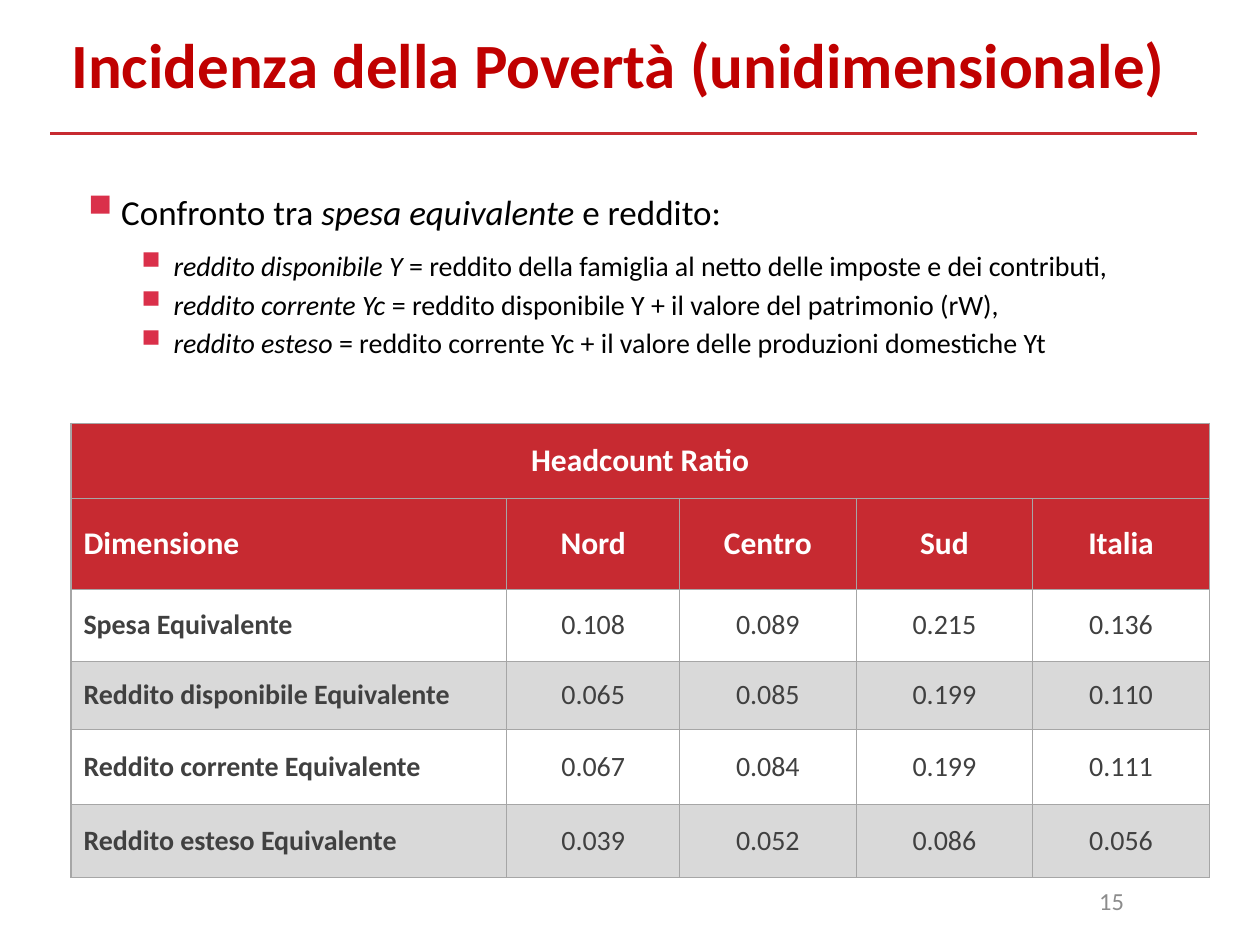
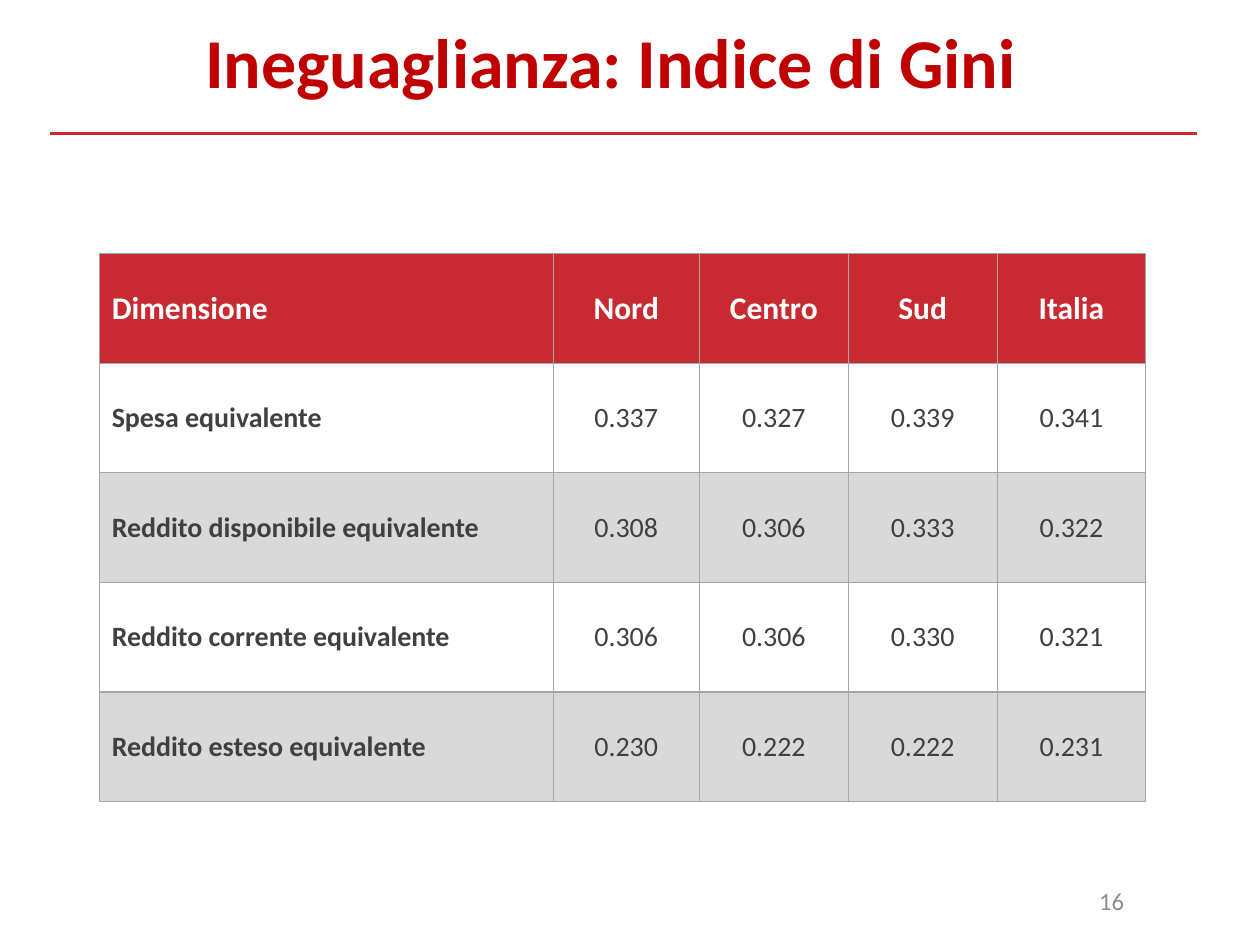
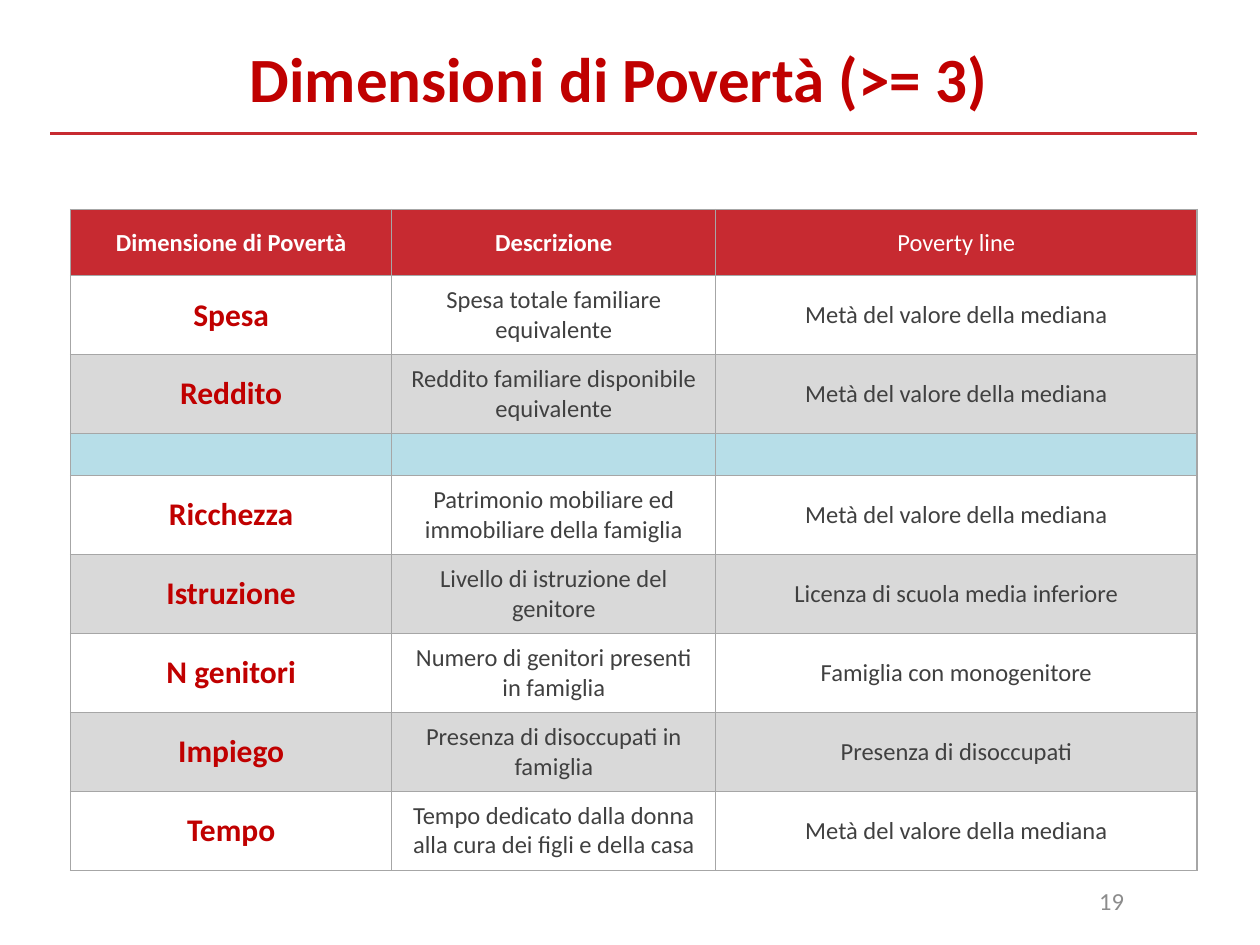
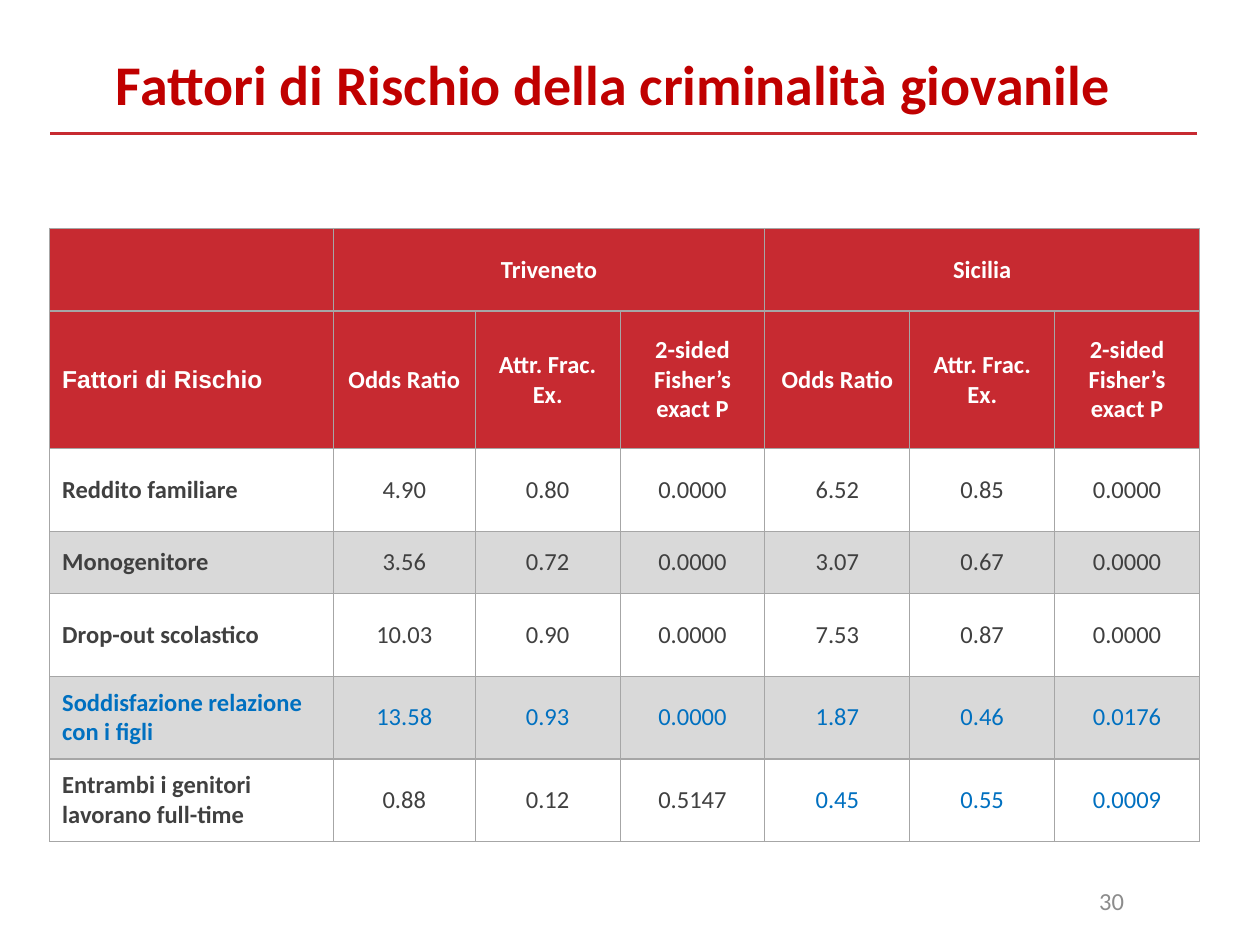
from lxml.etree import SubElement
from pptx import Presentation
from pptx.dml.color import RGBColor
from pptx.enum.shapes import MSO_CONNECTOR
from pptx.enum.text import MSO_ANCHOR, PP_ALIGN
from pptx.oxml import parse_xml
from pptx.oxml.ns import nsdecls, qn
from pptx.util import Cm, Pt

RED = RGBColor(0xC7, 0x2A, 0x31)
DEEP = RGBColor(0xC0, 0x00, 0x00)
WHITE = RGBColor(0xFF, 0xFF, 0xFF)
BLACK = RGBColor(0x00, 0x00, 0x00)
DARK = RGBColor(0x40, 0x40, 0x40)
GREY = RGBColor(0x8C, 0x8C, 0x8C)
BAND = RGBColor(0xD9, 0xD9, 0xD9)
EDGE = RGBColor(0xA6, 0xA6, 0xA6)
BLUE = RGBColor(0x00, 0x70, 0xC0)
SKY = RGBColor(0xB7, 0xDE, 0xE8)
BULLET = RGBColor(0xDA, 0x30, 0x4A)

FONT = "Calibri"
AREAS = ["Dimensione", "Nord", "Centro", "Sud", "Italia"]
MEDIAN = "Metà del valore della mediana"


def style(para, size, color, bold=False, name=FONT):
    for run in para.runs:
        run.font.name = name
        run.font.size = Pt(size)
        run.font.bold = bold
        run.font.color.rgb = color


def add_box(slide, left, top, width, height, inset=True):
    box = slide.shapes.add_textbox(Cm(left), Cm(top), Cm(width), Cm(height))
    frame = box.text_frame
    frame.word_wrap = True
    if not inset:
        frame.margin_left = frame.margin_right = 0
        frame.margin_top = frame.margin_bottom = 0
    return frame


def add_label(frame, text, size, color, align, bold=False):
    frame.text = text
    para = frame.paragraphs[0]
    para.alignment = align
    style(para, size, color, bold)


def add_page(deck, number, title, size, left, top):
    slide = deck.slides.add_slide(deck.slide_layouts[6])
    rule = slide.shapes.add_connector(
        MSO_CONNECTOR.STRAIGHT, Cm(24.13), Cm(2.69), Cm(1), Cm(2.69))
    rule.line.color.rgb = RED
    rule.line.width = Pt(2)
    SubElement(rule._element.spPr, qn("a:effectLst"))
    foot = add_box(slide, 15.29, 17.65, 7.62, 1.02)
    foot.vertical_anchor = MSO_ANCHOR.MIDDLE
    add_label(foot, str(number), 14, GREY, PP_ALIGN.RIGHT)
    head = add_box(slide, left, top, 22.94, 1.9, inset=False)
    add_label(head, title, size, DEEP, PP_ALIGN.CENTER, True)
    return slide


def add_bullet(para, parts, size, level, before):
    para.level = level
    para.alignment = PP_ALIGN.JUSTIFY
    para.space_before = Pt(before)
    props = para._p.get_or_add_pPr()
    props.set("marL", str(Cm(1.9 if level else 0.79)))
    props.set("indent", str(-Cm(0.79)))
    tint = SubElement(props, qn("a:buClr"))
    SubElement(tint, qn("a:srgbClr")).set("val", str(BULLET))
    SubElement(props, qn("a:buSzPct")).set("val", "160000")
    SubElement(props, qn("a:buChar")).set("char", "▪")
    for text, slant in parts:
        run = para.add_run()
        run.text = text
        run.font.italic = slant
    style(para, size, BLACK)


def paint(cell, color):
    cell.fill.solid()
    cell.fill.fore_color.rgb = color


def frame_cell(cell):
    props = cell._tc.get_or_add_tcPr()
    for place, side in enumerate(("lnL", "lnR", "lnT", "lnB")):
        props.insert(place, parse_xml(
            f'<a:{side} {nsdecls("a")} w="{Pt(0.75)}"><a:solidFill>'
            f'<a:srgbClr val="{EDGE}"/></a:solidFill></a:{side}>'))


def add_grid(slide, left, top, cols, rows, data, heads, sizes, lead=PP_ALIGN.LEFT):
    shape = slide.shapes.add_table(
        len(rows), len(cols), Cm(left), Cm(top), Cm(sum(cols)), Cm(sum(rows)))
    table = shape.table
    table.first_row = table.horz_banding = False
    for col, width in zip(table.columns, cols):
        col.width = Cm(width)
    for row, height in zip(table.rows, rows):
        row.height = Cm(height)
    for r, line in enumerate(data):
        head = r < heads
        back = RED if head else BAND if (r - heads) % 2 else WHITE
        for c, text in enumerate(line):
            cell = table.cell(r, c)
            cell.vertical_anchor = MSO_ANCHOR.MIDDLE
            paint(cell, back)
            frame_cell(cell)
            if text:
                cell.text = text
                para = cell.text_frame.paragraphs[0]
                para.alignment = PP_ALIGN.CENTER if c else lead
                style(para, sizes[0] if head else sizes[1],
                      WHITE if head else DARK, head or c == 0)
    return table


def restyle(table, row, cols, *look):
    for col in cols:
        style(table.cell(row, col).text_frame.paragraphs[0], *look)


def add_poverty(deck):
    slide = add_page(deck, 15, "Incidenza della Povertà (unidimensionale)", 36, 1, 0.51)
    frame = add_box(slide, 1.6, 3.84, 23.11, 8.76, inset=False)
    add_bullet(frame.paragraphs[0], [
        ("Confronto tra ", False), ("spesa equivalente", True), (" e reddito:", False)],
        20, 0, 0)
    terms = [
        ("reddito disponibile Y",
         " = reddito della famiglia al netto delle imposte e dei contributi,"),
        ("reddito corrente Yc", " = reddito disponibile Y + il valore del patrimonio (rW),"),
        ("reddito esteso", " = reddito corrente Yc + il valore delle produzioni domestiche Yt"),
    ]
    for i, (term, rest) in enumerate(terms):
        add_bullet(frame.add_paragraph(), [(term, True), (rest, False)],
                   16, 1, 3 if i else 9)
    data = [
        ["Headcount Ratio", "", "", "", ""],
        AREAS,
        ["Spesa Equivalente", "0.108", "0.089", "0.215", "0.136"],
        ["Reddito disponibile Equivalente", "0.065", "0.085", "0.199", "0.110"],
        ["Reddito corrente Equivalente", "0.067", "0.084", "0.199", "0.111"],
        ["Reddito esteso Equivalente", "0.039", "0.052", "0.086", "0.056"],
    ]
    table = add_grid(slide, 1.43, 8.53, [8.79, 3.48] + [3.56] * 3,
                     [1.52, 1.83, 1.45, 1.37, 1.52, 1.47], data, 2, (18, 16))
    table.cell(0, 0).merge(table.cell(0, 4))
    table.cell(0, 0).text_frame.paragraphs[0].alignment = PP_ALIGN.CENTER


def add_gini(deck):
    slide = add_page(deck, 16, "Ineguaglianza: Indice di Gini", 40, 0.84, 0.38)
    data = [
        AREAS,
        ["Spesa equivalente", "0.337", "0.327", "0.339", "0.341"],
        ["Reddito disponibile equivalente", "0.308", "0.306", "0.333", "0.322"],
        ["Reddito corrente equivalente", "0.306", "0.306", "0.330", "0.321"],
        ["Reddito esteso equivalente", "0.230", "0.222", "0.222", "0.231"],
    ]
    add_grid(slide, 2, 5.11, [9.15, 2.95] + [3] * 3, [2.21] * 5, data, 1, (18, 16))


def add_scope(deck):
    slide = add_page(deck, 19, "Dimensioni di Povertà (>= 3)", 36, 1, 0.79)
    data = [
        ["Dimensione di Povertà", "Descrizione", "Poverty line"],
        ["Spesa", "Spesa totale familiare equivalente", MEDIAN],
        ["Reddito", "Reddito familiare disponibile equivalente", MEDIAN],
        ["", "", ""],
        ["Ricchezza", "Patrimonio mobiliare ed immobiliare della famiglia", MEDIAN],
        ["Istruzione", "Livello di istruzione del genitore",
         "Licenza di scuola media inferiore"],
        ["N genitori", "Numero di genitori presenti in famiglia",
         "Famiglia con monogenitore"],
        ["Impiego", "Presenza di disoccupati in famiglia", "Presenza di disoccupati"],
        ["Tempo", "Tempo dedicato dalla donna alla cura dei figli e della casa", MEDIAN],
    ]
    gap = 3
    rows = [1.34] + [1.59] * 8
    rows[gap] = 0.85
    table = add_grid(slide, 1.42, 4.22, [6.48, 6.53, 9.7], rows, data, 1,
                     (14, 14), PP_ALIGN.CENTER)
    restyle(table, 0, [2], 14, WHITE)
    for r in range(1, len(data)):
        restyle(table, r, [0], 18, DEEP, True)
        if r > gap:
            for c in range(3):
                paint(table.cell(r, c), WHITE if r % 2 == 0 else BAND)
    for c in range(3):
        cell = table.cell(gap, c)
        paint(cell, SKY)
        cell.margin_top = cell.margin_bottom = 0


def add_risk(deck):
    slide = add_page(deck, 30, "Fattori di Rischio della criminalità giovanile", 32, 0.9, 0.99)
    tests = ["Odds Ratio", "Attr. Frac. Ex.", "2-sided Fisher’s exact P"]
    data = [
        ["", "Triveneto", "", "", "Sicilia", "", ""],
        ["Fattori di Rischio"] + tests * 2,
        ["Reddito familiare", "4.90", "0.80", "0.0000", "6.52", "0.85", "0.0000"],
        ["Monogenitore", "3.56", "0.72", "0.0000", "3.07", "0.67", "0.0000"],
        ["Drop-out scolastico", "10.03", "0.90", "0.0000", "7.53", "0.87", "0.0000"],
        ["Soddisfazione relazione con i figli",
         "13.58", "0.93", "0.0000", "1.87", "0.46", "0.0176"],
        ["Entrambi i genitori lavorano full-time",
         "0.88", "0.12", "0.5147", "0.45", "0.55", "0.0009"],
    ]
    table = add_grid(slide, 1, 4.6, [5.72, 2.86] + [2.92] * 5,
                     [1.67, 2.77, 1.67, 1.25] + [1.67] * 3, data, 2, (14, 14))
    for c in (1, 4):
        table.cell(0, c).merge(table.cell(0, c + 2))
    restyle(table, 1, [0], 14, WHITE, True, "Arial")
    restyle(table, 5, [0], 14, BLUE, True)
    restyle(table, 5, range(1, 7), 14, BLUE)
    restyle(table, 6, range(4, 7), 14, BLUE)


def main():
    deck = Presentation()
    deck.slide_width = Cm(25.4)
    deck.slide_height = Cm(19.05)
    add_poverty(deck)
    add_gini(deck)
    add_scope(deck)
    add_risk(deck)
    deck.save("out.pptx")


if __name__ == "__main__":
    main()
